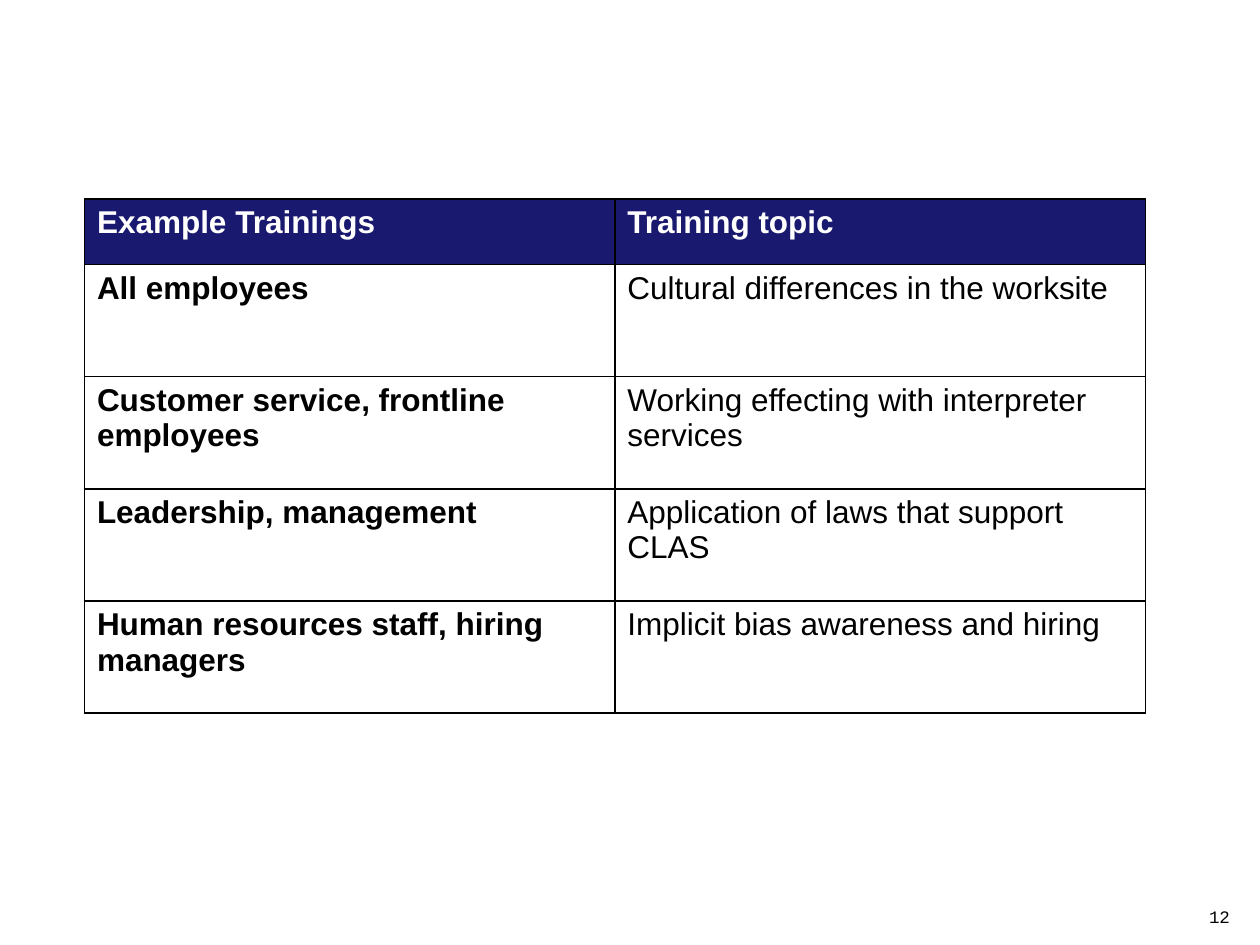
import lxml.etree
import pptx
import pptx.dml.color
import pptx.enum.text
import pptx.oxml.ns
import pptx.util

Inches = pptx.util.Inches
COLORS = {"header": "19196F", "header_text": "FFFFFF", "text": "000000", "border": "000000"}
TRAININGS = [
    ("Example Trainings", "Training topic"),
    ("All employees", "Cultural differences in the worksite"),
    ("Customer service, frontline employees", "Working effecting with interpreter services"),
    ("Leadership, management", "Application of laws that support CLAS"),
    ("Human resources staff, hiring managers", "Implicit bias awareness and hiring"),
]
HEADER_HEIGHT = 0.52


def add_run(paragraph, text, font_name, size, color, bold=False):
    """Append one formatted run to a paragraph."""
    run = paragraph.add_run()
    run.text = text
    run.font.name = font_name
    run.font.size = pptx.util.Pt(size)
    run.font.bold = bold
    run.font.color.rgb = pptx.dml.color.RGBColor.from_string(COLORS[color])


def add_borders(cell):
    """Draw a one-point line on all four sides of a cell."""
    qn = pptx.oxml.ns.qn
    properties = cell._tc.get_or_add_tcPr()
    for position, side in enumerate(("a:lnL", "a:lnR", "a:lnT", "a:lnB")):
        line = lxml.etree.Element(qn(side), w=str(pptx.util.Pt(1)))
        fill = lxml.etree.SubElement(line, qn("a:solidFill"))
        lxml.etree.SubElement(fill, qn("a:srgbClr"), val=COLORS["border"])
        properties.insert(position, line)


def add_training_table(slide, left, top, width, height):
    """Place the table of audiences and training topics."""
    table = slide.shapes.add_table(
        len(TRAININGS), 2, Inches(left), Inches(top), Inches(width), Inches(height)
    ).table
    body_height = (height - HEADER_HEIGHT) / (len(TRAININGS) - 1)
    for row, entry in enumerate(TRAININGS):
        is_header = row == 0
        table.rows[row].height = Inches(HEADER_HEIGHT if is_header else body_height)
        for column, text in enumerate(entry):
            cell = table.cell(row, column)
            if is_header:
                cell.fill.solid()
                cell.fill.fore_color.rgb = pptx.dml.color.RGBColor.from_string(COLORS["header"])
            else:
                cell.fill.background()
            add_borders(cell)
            color = "header_text" if is_header else "text"
            add_run(cell.text_frame.paragraphs[0], text, "Arial", 18, color,
                    bold=is_header or column == 0)


def add_page_number(slide, left, top, width, height):
    """Place the page number in the bottom right corner."""
    frame = slide.shapes.add_textbox(
        Inches(left), Inches(top), Inches(width), Inches(height)
    ).text_frame
    frame.word_wrap = True
    frame.vertical_anchor = pptx.enum.text.MSO_ANCHOR.BOTTOM
    paragraph = frame.paragraphs[0]
    paragraph.alignment = pptx.enum.text.PP_ALIGN.RIGHT
    add_run(paragraph, "12", "Courier New", 10, "text")


def main():
    """Build and save the training slide."""
    presentation = pptx.Presentation()
    presentation.slide_width = Inches(10)
    presentation.slide_height = Inches(7.5)
    slide = presentation.slides.add_slide(presentation.slide_layouts[6])
    add_training_table(slide, 0.67, 1.58, 8.42, 4.08)
    add_page_number(slide, 9.46, 7.01, 0.4, 0.4)
    presentation.save("out.pptx")


if __name__ == "__main__":
    main()
